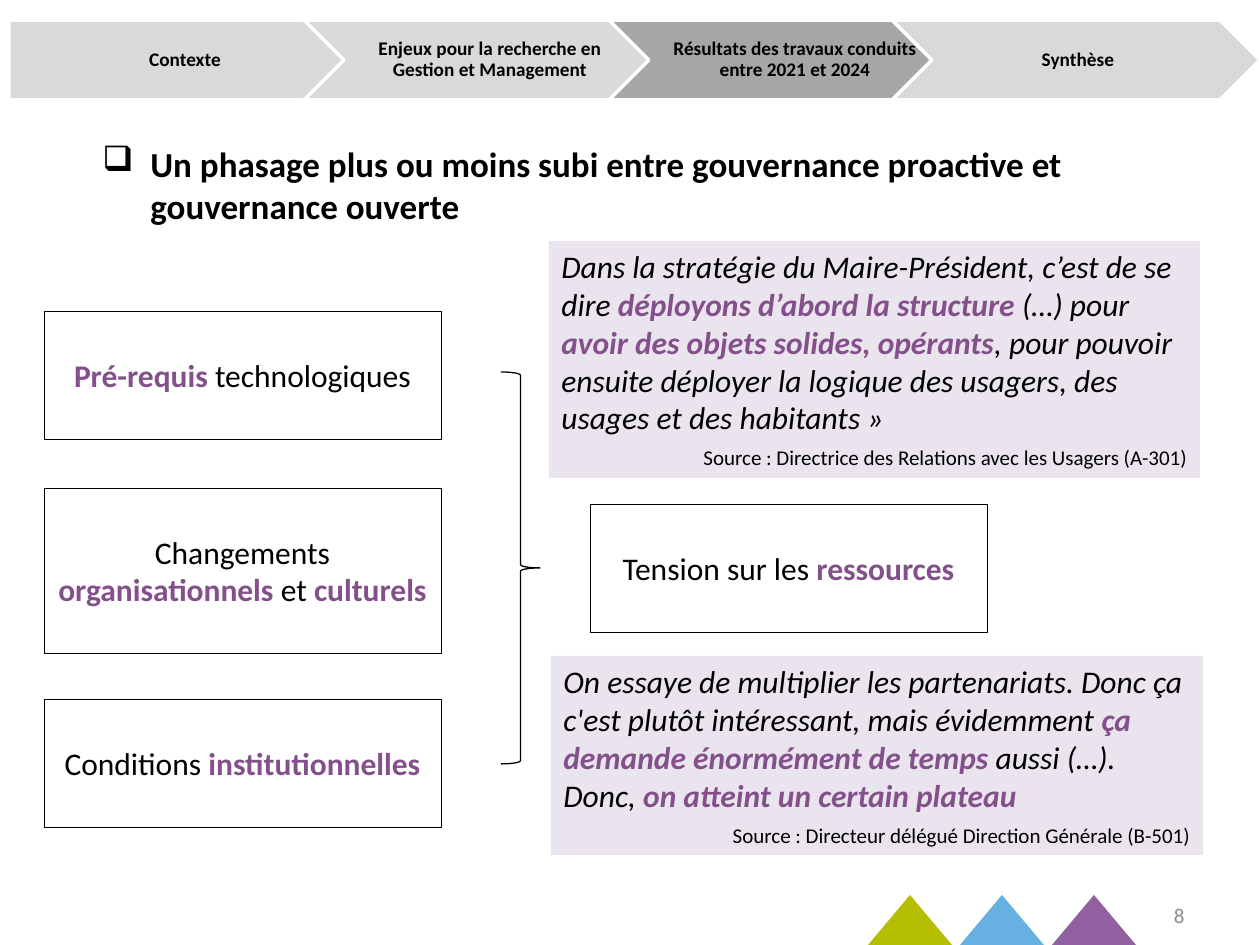
"""Build the slide on phased governance: steps, prerequisites, tension and quotes."""
from lxml import etree
from pptx import Presentation
from pptx.dml.color import RGBColor
from pptx.enum.shapes import MSO_SHAPE
from pptx.enum.text import MSO_ANCHOR, PP_ALIGN
from pptx.oxml.ns import qn
from pptx.util import Pt

PX = 914400 / 126
RECTANGLE, TRIANGLE = MSO_SHAPE.RECTANGLE, MSO_SHAPE.ISOSCELES_TRIANGLE
PENTAGON, CHEVRON, BRACE = MSO_SHAPE.PENTAGON, MSO_SHAPE.CHEVRON, MSO_SHAPE.RIGHT_BRACE
LEFT, CENTER, RIGHT = PP_ALIGN.LEFT, PP_ALIGN.CENTER, PP_ALIGN.RIGHT
TOP, MIDDLE = MSO_ANCHOR.TOP, MSO_ANCHOR.MIDDLE

BLACK = RGBColor(0x00, 0x00, 0x00)
WHITE = RGBColor(0xFF, 0xFF, 0xFF)
PURPLE = RGBColor(0x84, 0x50, 0x8B)
LILAC = RGBColor(0xE6, 0xE0, 0xEC)
STEP_GREY = RGBColor(0xD9, 0xD9, 0xD9)
CURRENT_GREY = RGBColor(0xA6, 0xA6, 0xA6)
NUMBER_GREY = RGBColor(0x8C, 0x8C, 0x8C)
GREEN = RGBColor(0xB5, 0xBE, 0x00)
BLUE = RGBColor(0x67, 0xB0, 0xE2)
VIOLET = RGBColor(0x92, 0x60, 0xA0)

presentation = Presentation()
presentation.slide_width = round(1260 * PX)
presentation.slide_height = round(945 * PX)
slide = presentation.slides.add_slide(presentation.slide_layouts[6])


def add_block(kind, box, fill=None, line=None, line_width=0.25, anchor=MIDDLE):
    block = slide.shapes.add_shape(kind, *(round(length * PX) for length in box))
    block.shadow.inherit = False
    if fill is None:
        block.fill.background()
    else:
        block.fill.solid()
        block.fill.fore_color.rgb = fill
    if line is None:
        block.line.fill.background()
    else:
        block.line.color.rgb = line
        block.line.width = Pt(line_width)
    block.text_frame.word_wrap = True
    block.text_frame.vertical_anchor = anchor
    return block


def write(paragraph, pieces, size, align, bold=False, italic=False, color=BLACK):
    paragraph.alignment = align
    font = paragraph.font
    font.name, font.size, font.bold, font.italic = "Calibri", Pt(size), bold, italic
    font.color.rgb = color
    for position, piece in enumerate(pieces):
        run = paragraph.add_run()
        run.text = piece
        if position % 2:
            run.font.bold = True
            run.font.color.rgb = PURPLE


for left, color in ((868, GREEN), (960, BLUE), (1052, VIOLET)):
    add_block(TRIANGLE, (left, 895, 84, 50), color)

page_number = add_block(RECTANGLE, (1137, 890, 60, 50))
write(page_number.text_frame.paragraphs[0], ["8"], 12, RIGHT, color=NUMBER_GREY)

factors = (
    ((44, 311, 397, 128), ["", "Pré-requis", " technologiques"]),
    ((44, 488, 397, 165), ["Changements ", "organisationnels", " et ", "culturels"]),
    ((44, 699, 397, 128), ["Conditions ", "institutionnelles"]),
    ((590, 504, 397, 128), ["Tension sur les ", "ressources"]),
)
for box, pieces in factors:
    factor = add_block(RECTANGLE, box, line=BLACK)
    write(factor.text_frame.paragraphs[0], filter(None, pieces) if pieces[0] else pieces, 18, CENTER)

add_block(BRACE, (501, 372, 39, 392), line=BLACK, line_width=0.75)

heading = add_block(RECTANGLE, (90, 136, 1150, 136), anchor=TOP).text_frame.paragraphs[0]
write(heading, ["Un phasage plus ou moins subi entre gouvernance proactive et gouvernance ouverte"],
      20, LEFT, bold=True)
heading_format = heading._p.get_or_add_pPr()
heading_format.set("marL", str(round(48 * PX)))
heading_format.set("indent", str(round(-48 * PX)))
bullet = etree.Element(qn("a:buChar"), char="❑")
heading_format.find(qn("a:defRPr")).addprevious(bullet)

quotes = (
    ((549, 241, 651, 237),
     ["Dans la stratégie du Maire-Président, c’est de se dire ",
      "déployons d’abord la structure ", "(…) pour ", "avoir des objets solides, opérants",
      ", pour pouvoir ensuite déployer la logique des usagers, des usages et des habitants »"],
     "Source : Directrice des Relations avec les Usagers (A-301)"),
    ((551, 656, 652, 199),
     ["On essaye de multiplier les partenariats. Donc ça c'est plutôt intéressant, mais évidemment ",
      "ça demande énormément de temps", " aussi (…). Donc, ", "on atteint un certain plateau"],
     "Source : Directeur délégué Direction Générale (B-501)"),
)
for box, pieces, source in quotes:
    quote = add_block(RECTANGLE, box, LILAC, anchor=TOP)
    lilac = quote._element.spPr.find(qn("a:solidFill"))[0]
    etree.SubElement(lilac, qn("a:alpha"), val="85000")
    write(quote.text_frame.paragraphs[0], pieces, 18, LEFT, italic=True)
    credit = quote.text_frame.add_paragraph()
    credit.space_before = Pt(5)
    write(credit, [source], 12, RIGHT)

steps = (
    (PENTAGON, 9, STEP_GREY, "Contexte"),
    (CHEVRON, 304, STEP_GREY, "Enjeux pour la recherche en Gestion et Management"),
    (CHEVRON, 609, CURRENT_GREY, "Résultats des travaux conduits entre 2021 et 2024"),
    (CHEVRON, 892, STEP_GREY, "Synthèse"),
)
for kind, left, color, title in steps:
    step = add_block(kind, (left, 20, 368, 80), color, WHITE, 2)
    frame = step.text_frame
    frame.margin_left, frame.margin_right = round(5 * PX), round(1 * PX)
    frame.margin_top = frame.margin_bottom = round(4 * PX)
    frame.paragraphs[0].line_spacing = 0.9
    write(frame.paragraphs[0], [title], 11, CENTER, bold=True)

presentation.save("out.pptx")
